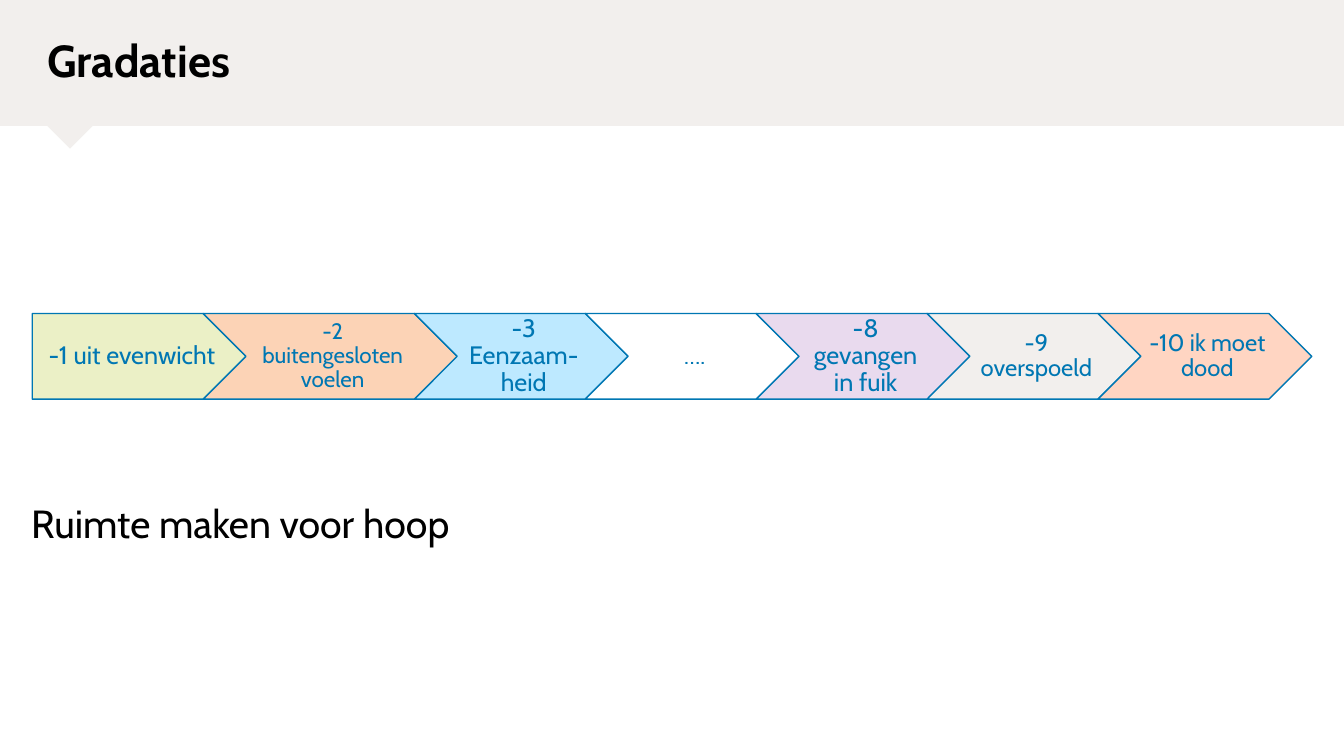
import pptx
import pptx.dml.color
import pptx.enum.shapes
import pptx.enum.text
import pptx.oxml
import pptx.util

TITLE = "Gradaties"
CLOSING = "Ruimte maken voor hoop"
# label, fill, text size, step width
STEPS = [
    ("-1 uit evenwicht", "EBF0C6", 18, 2.12),
    ("-2 buitengesloten voelen", "FCD3B6", 16, 2.52),
    ("-3 Eenzaam-heid", "BDE9FF", 18, 2.12),
    ("….", "FFFFFF", 17, 2.12),
    ("-8 gevangen in fuik", "E9DAEE", 18, 2.12),
    ("-9 overspoeld", "F2EFED", 17, 2.12),
    ("-10 ik moet dood", "FFD5C2", 17, 2.12),
]
FONT, BLACK, BLUE, SAND = "Cabin", "000000", "0077B3", "F2EFED"
WIDTH, HEIGHT = 13.33, 7.5
BAND_HEIGHT = HEIGHT / 6
MARGIN = 0.47
DIAMOND = 0.45
STEP_LEFT, STEP_TOP, STEP_HEIGHT = 0.32, 3.11, 0.85
OVERLAP = STEP_HEIGHT / 2  # each step starts inside the point before it

SHAPES = pptx.enum.shapes.MSO_SHAPE
ALIGN = pptx.enum.text.PP_ALIGN
ANCHOR = pptx.enum.text.MSO_ANCHOR
inches = pptx.util.Inches


def color(hex_value):
    return pptx.dml.color.RGBColor.from_string(hex_value)


def add_filled(kind, box, fill, line=None):
    shape = slide.shapes.add_shape(kind, *map(inches, box))
    shape.shadow.inherit = False
    shape.fill.solid()
    shape.fill.fore_color.rgb = color(fill)
    if line:
        shape.line.color.rgb = color(line)
        shape.line.width = pptx.util.Pt(1)
    else:
        shape.line.fill.background()
    return shape


def write(shape, text, size, ink, align, anchor, insets, spacing=0.9, bold=False):
    frame = shape.text_frame
    frame.word_wrap = True
    frame.auto_size = pptx.enum.text.MSO_AUTO_SIZE.NONE
    frame.vertical_anchor = anchor
    (frame.margin_left, frame.margin_top,
     frame.margin_right, frame.margin_bottom) = map(inches, insets)
    paragraph = frame.paragraphs[0]
    paragraph.alignment = align
    paragraph.line_spacing = spacing
    paragraph.space_before = pptx.util.Pt(0)
    run = paragraph.add_run()
    run.text = text
    run.font.name = FONT
    run.font.size = pptx.util.Pt(size)
    run.font.bold = bold
    run.font.color.rgb = color(ink)
    return paragraph


def place(shape, box):
    shape.left, shape.top, shape.width, shape.height = map(inches, box)


deck = pptx.Presentation()
deck.slide_width, deck.slide_height = inches(WIDTH), inches(HEIGHT)
slide = deck.slides.add_slide(deck.slide_layouts[1])
title, closing = slide.placeholders

band = add_filled(SHAPES.RECTANGLE, (0, 0, WIDTH, BAND_HEIGHT), SAND)
pointer = add_filled(
    SHAPES.DIAMOND,
    (MARGIN, BAND_HEIGHT - DIAMOND / 2, DIAMOND, DIAMOND), SAND)
for backdrop in (band, pointer):
    title.element.addprevious(backdrop.element)

place(title, (MARGIN, 0, WIDTH - 2 * MARGIN, BAND_HEIGHT))
write(title, TITLE, 32, BLACK, ALIGN.LEFT, ANCHOR.MIDDLE, (0, 0, 0, 0), bold=True)

left = STEP_LEFT
for number, (label, fill, size, width) in enumerate(STEPS):
    kind = SHAPES.CHEVRON if number else SHAPES.PENTAGON
    step = add_filled(kind, (left, STEP_TOP, width, STEP_HEIGHT), fill, BLUE)
    insets = (0.07, 0.05, 0.02, 0.05) if number else (0.1, 0.05, 0.03, 0.05)
    write(step, label, size, BLUE, ALIGN.CENTER, ANCHOR.MIDDLE, insets)
    left += width - OVERLAP

place(closing, (0.31, 4.95, WIDTH - 2 * MARGIN, 0.81))
line = write(closing, CLOSING, 28, BLACK, ALIGN.LEFT, ANCHOR.TOP,
             (0, 0, 0, 0), spacing=1.0)
properties = line._p.get_or_add_pPr()
properties.set("marL", "0")
properties.set("indent", "0")
properties.append(pptx.oxml.parse_xml(
    '<a:buNone xmlns:a="http://schemas.openxmlformats.org/drawingml/2006/main"/>'))

deck.save("out.pptx")
